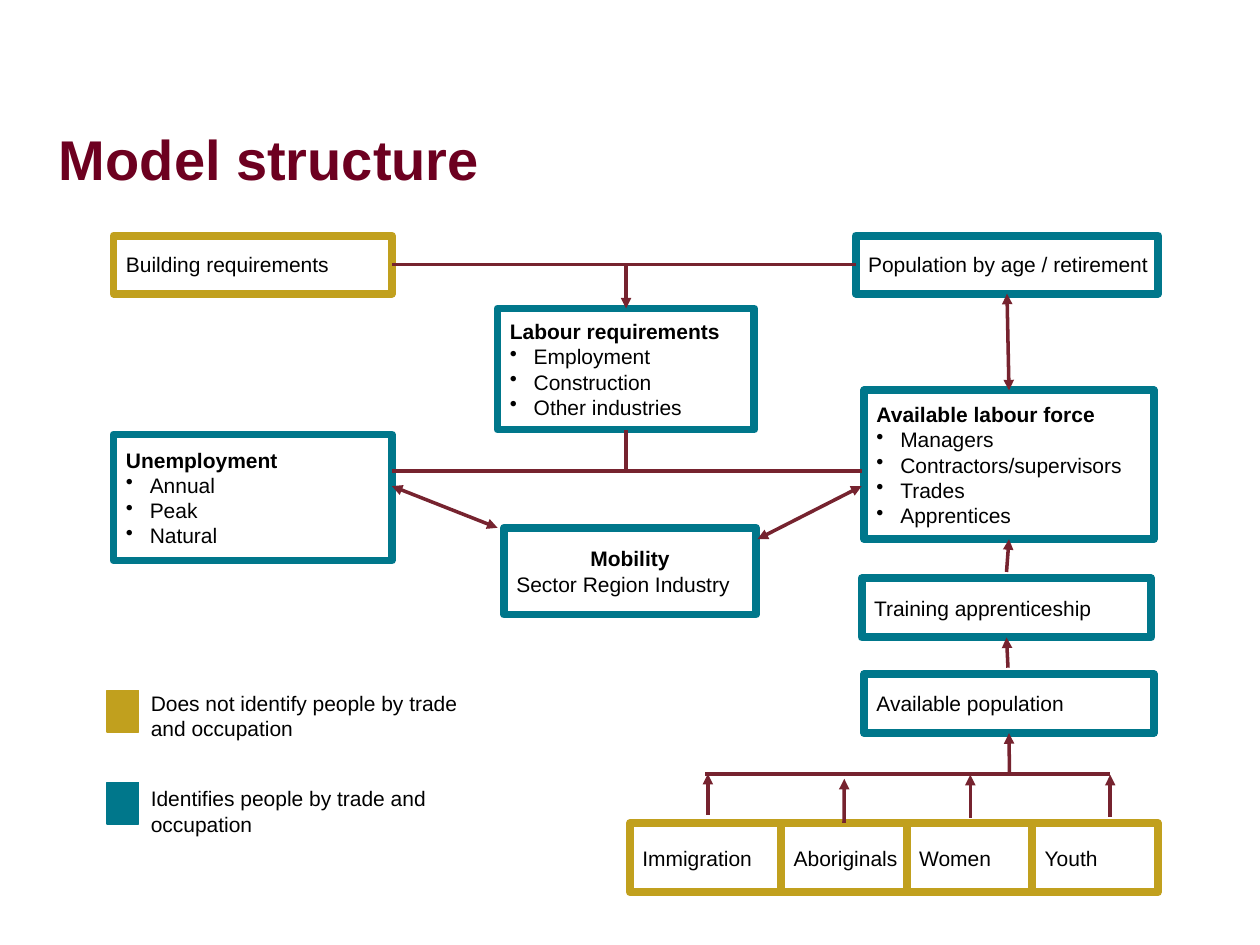
"""Build the labour market model structure slide."""
from dataclasses import dataclass
from typing import Union

import pptx
import pptx.dml.color
import pptx.enum.shapes
import pptx.enum.text
import pptx.oxml.ns
import pptx.util
from lxml import etree

Cm = pptx.util.Cm
Pt = pptx.util.Pt
ALIGN = pptx.enum.text.PP_ALIGN
ANCHOR = pptx.enum.text.MSO_ANCHOR
GOLD, TEAL, WINE, MAROON = "C1A01E", "00778B", "76232F", "6D0020"
BLACK, WHITE = "000000", "FFFFFF"
TOP, LEFT, BOTTOM, RIGHT = range(4)


@dataclass
class Node:
    title: str
    left: float
    top: float
    width: float
    height: float
    border: str = TEAL
    items: tuple = ()
    bulleted: bool = True


@dataclass
class Side:
    title: str
    site: int


@dataclass
class Point:
    x: float
    y: float


@dataclass
class Link:
    start: Union[Side, Point]
    end: Union[Side, Point]
    head: bool = False
    tail: bool = False


@dataclass
class Key:
    text: str
    color: str
    swatch_top: float
    text_top: float


SOURCES = [("Immigration", 3.05), ("Aboriginals", 2.53), ("Women", 2.53), ("Youth", 2.53)]

NODES = [
    Node("Building requirements", 2.29, 4.75, 5.61, 1.17, GOLD),
    Node("Population by age / retirement", 17.25, 4.75, 6.1, 1.17),
    Node("Labour requirements", 10.03, 6.22, 5.18, 2.44,
         items=("Employment", "Construction", "Other industries")),
    Node("Available labour force", 17.42, 7.87, 5.84, 3,
         items=("Managers", "Contractors/supervisors", "Trades", "Apprentices")),
    Node("Unemployment", 2.29, 8.76, 5.61, 2.54, items=("Annual", "Peak", "Natural")),
    Node("Mobility", 10.16, 10.64, 5.08, 1.75,
         items=("Sector Region Industry",), bulleted=False),
    Node("Training apprenticeship", 17.37, 11.66, 5.84, 1.19),
    Node("Available population", 17.42, 13.59, 5.84, 1.19),
]

LINKS = [
    Link(Side("Building requirements", RIGHT), Side("Population by age / retirement", LEFT)),
    Link(Point(12.62, 5.33), Side("Labour requirements", TOP), tail=True),
    Link(Side("Population by age / retirement", BOTTOM), Side("Available labour force", TOP),
         head=True, tail=True),
    Link(Point(7.9, 9.5), Point(17.37, 9.5)),
    Link(Side("Labour requirements", BOTTOM), Point(12.62, 9.5)),
    Link(Point(7.9, 9.8), Point(10.03, 10.64), head=True, tail=True),
    Link(Point(15.27, 10.87), Point(17.37, 9.8), head=True, tail=True),
    Link(Side("Available labour force", BOTTOM), Point(20.29, 11.53), head=True),
    Link(Side("Training apprenticeship", BOTTOM), Point(20.32, 13.46), head=True),
    Link(Point(14.22, 15.6), Point(22.38, 15.6)),
    Link(Side("Available population", BOTTOM), Point(20.35, 15.6), head=True),
    Link(Point(14.27, 15.6), Point(14.27, 16.43), head=True),
    Link(Point(17.02, 15.7), Side("Aboriginals", TOP), head=True),
    Link(Point(19.56, 15.62), Point(19.56, 16.48), head=True),
    Link(Point(22.38, 15.62), Point(22.38, 16.46), head=True),
]

KEYS = [
    Key("Does not identify people by trade and occupation", GOLD, 13.92, 13.79),
    Key("Identifies people by trade and occupation", TEAL, 15.77, 15.72),
]


def color(value: str) -> pptx.dml.color.RGBColor:
    """Turn a hex string into a colour."""
    return pptx.dml.color.RGBColor.from_string(value)


def style_text(para, size: float = 12, ink: str = BLACK, bold: bool = False) -> None:
    """Set the font of a left-aligned paragraph."""
    para.alignment = ALIGN.LEFT
    para.font.name = "Arial"
    para.font.size = Pt(size)
    para.font.bold = bold
    para.font.color.rgb = color(ink)


def add_bullet(para) -> None:
    """Give a paragraph a hanging round bullet."""
    properties = para._p.get_or_add_pPr()
    properties.set("marL", str(Cm(0.48)))
    properties.set("indent", str(-Cm(0.48)))
    bullet = etree.SubElement(properties, pptx.oxml.ns.qn("a:buChar"))
    bullet.set("char", "•")


def draw_rectangle(page, left: float, top: float, width: float, height: float,
                   fill: str, border: str, weight: float):
    """Draw a flat rectangle."""
    box = page.shapes.add_shape(pptx.enum.shapes.MSO_SHAPE.RECTANGLE,
                                Cm(left), Cm(top), Cm(width), Cm(height))
    box.shadow.inherit = False
    box.fill.solid()
    box.fill.fore_color.rgb = color(fill)
    box.line.color.rgb = color(border)
    box.line.width = Pt(weight)
    return box


def draw_text(page, text: str, left: float, top: float, width: float, height: float):
    """Draw a wrapping text box and return it."""
    box = page.shapes.add_textbox(Cm(left), Cm(top), Cm(width), Cm(height))
    box.text_frame.word_wrap = True
    box.text_frame.text = text
    return box


def draw_node(page, node: Node):
    """Draw a bordered box with its title and items."""
    box = draw_rectangle(page, node.left, node.top, node.width, node.height,
                         WHITE, node.border, 4.5)
    frame = box.text_frame
    frame.word_wrap = False
    frame.vertical_anchor = ANCHOR.MIDDLE
    heading = frame.paragraphs[0]
    heading.text = node.title
    style_text(heading, bold=bool(node.items))
    if not node.bulleted:
        heading.alignment = ALIGN.CENTER
    for item in node.items:
        para = frame.add_paragraph()
        para.text = item
        if node.bulleted:
            add_bullet(para)
        style_text(para)
    return box


def draw_link(page, link: Link, boxes: dict) -> None:
    """Draw a line, joined to boxes where its ends name a side."""
    start, end = (place if isinstance(place, Point) else Point(0, 0)
                  for place in (link.start, link.end))
    line = page.shapes.add_connector(pptx.enum.shapes.MSO_CONNECTOR.STRAIGHT,
                                     Cm(start.x), Cm(start.y), Cm(end.x), Cm(end.y))
    for place, connect in ((link.start, line.begin_connect), (link.end, line.end_connect)):
        if isinstance(place, Side):
            connect(boxes[place.title], place.site)
    line.line.color.rgb = color(WINE)
    line.line.width = Pt(2)
    outline = line.line._get_or_add_ln()
    for shown, tag in ((link.head, "a:headEnd"), (link.tail, "a:tailEnd")):
        if shown:
            etree.SubElement(outline, pptx.oxml.ns.qn(tag)).set("type", "triangle")
    etree.SubElement(line._element.spPr, pptx.oxml.ns.qn("a:effectLst"))


def main() -> None:
    """Build and save the slide."""
    deck = pptx.Presentation()
    deck.slide_width, deck.slide_height = Cm(25.4), Cm(19.05)
    page = deck.slides.add_slide(deck.slide_layouts[6])
    title = draw_text(page, "Model structure", 0.94, 1.6, 22.86, 3.18)
    title.text_frame.vertical_anchor = ANCHOR.MIDDLE
    style_text(title.text_frame.paragraphs[0], 32, MAROON, True)

    boxes = {node.title: draw_node(page, node) for node in NODES}
    left = 12.7
    for name, width in SOURCES:
        boxes[name] = draw_node(page, Node(name, left, 16.59, width, 1.4, GOLD))
        left += width
    for link in LINKS:
        draw_link(page, link, boxes)
    for key in KEYS:
        draw_rectangle(page, 2.16, key.swatch_top, 0.64, 0.84, key.color, key.color, 0.75)
        label = draw_text(page, key.text, 2.79, key.text_top, 6.83, 1.27)
        style_text(label.text_frame.paragraphs[0])
    deck.save("out.pptx")


if __name__ == "__main__":
    main()
